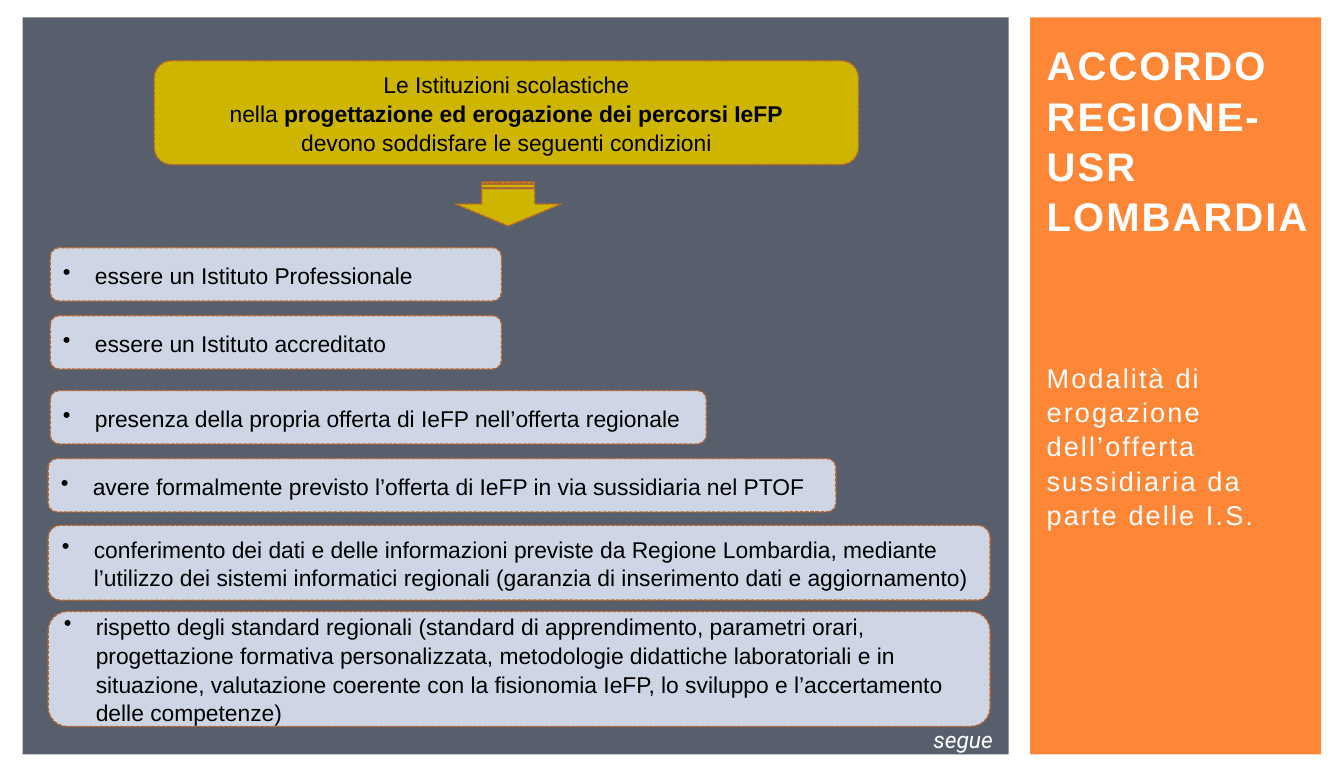
from dataclasses import dataclass

from lxml import etree
from pptx import Presentation
from pptx import util as u
from pptx.dml.color import RGBColor
from pptx.enum import dml, shapes, text
from pptx.oxml import ns


@dataclass(frozen=True)
class Theme:
    """Colours, fonts and type sizes of the slide."""
    panel: str = "575F6D"
    sidebar: str = "FE8637"
    accent: str = "CEB500"
    card: str = "CED6E6"
    outline: str = "BC6329"
    light: str = "FFFFFF"
    dark: str = "000000"
    font: str = "Arial"
    note_font: str = "Roboto"
    title_size: int = 28
    subtitle_size: int = 19
    body_size: int = 16
    line_spacing: float = 1.05


@dataclass(frozen=True)
class Box:
    """A rectangle in centimetres."""
    left: float
    top: float
    width: float
    height: float

    def inside(self, left, top, width, height):
        """Return a box offset from this one."""
        return Box(self.left + left, self.top + top, width, height)

    def lengths(self):
        """Return the four lengths for python-pptx."""
        return [u.Cm(value) for value in (self.left, self.top, self.width, self.height)]


THEME = Theme()
PANEL = Box(0.56, 0.43, 24.36, 18.21)
SIDEBAR = Box(25.45, 0.43, 7.19, 18.21)

HEADING = [
    [("Le Istituzioni scolastiche", False)],
    [("nella ", False), ("progettazione ed erogazione dei percorsi IeFP", True)],
    [("devono soddisfare le seguenti condizioni", False)],
]
CONDITIONS = [
    (0.68, 5.69, 11.15, 1.32, "essere un Istituto Professionale"),
    (0.68, 7.37, 11.15, 1.32, "essere un Istituto accreditato"),
    (0.68, 9.22, 16.21, 1.32,
     "presenza della propria offerta di IeFP nell’offerta regionale"),
    (0.63, 10.9, 19.46, 1.32,
     "avere formalmente previsto l’offerta di IeFP in via sussidiaria nel PTOF"),
    (0.63, 12.55, 23.27, 1.85,
     "conferimento dei dati e delle informazioni previste da Regione Lombardia, "
     "mediante l’utilizzo dei sistemi informatici regionali (garanzia di "
     "inserimento dati e aggiornamento)"),
    (0.63, 14.68, 23.27, 2.84,
     "rispetto degli standard regionali (standard di apprendimento, parametri orari, "
     "progettazione formativa personalizzata, metodologie didattiche laboratoriali e in "
     "situazione, valutazione coerente con la fisionomia IeFP, lo sviluppo e "
     "l’accertamento delle competenze)"),
]


def format_paragraph(paragraph, size, color, align=text.PP_ALIGN.LEFT, font=THEME.font):
    """Apply the type and spacing shared by all runs of a paragraph."""
    paragraph.alignment = align
    paragraph.line_spacing = THEME.line_spacing
    paragraph.space_before = u.Pt(0)
    paragraph.font.name = font
    paragraph.font.size = u.Pt(size)
    paragraph.font.color.rgb = RGBColor.from_string(color)


def add_bullet(paragraph):
    """Give a paragraph a hanging bullet."""
    properties = paragraph._p.get_or_add_pPr()
    properties.set("marL", str(u.Cm(0.79)))
    properties.set("indent", str(u.Cm(-0.79)))
    bullet = etree.Element(ns.qn("a:buChar"), char="•")
    properties.insert_element_before(bullet, "a:tabLst", "a:defRPr", "a:extLst")


def add_filled_shape(slide, kind, box, fill, outlined=True):
    """Add a flat shape, outlined with a fine dashed line if asked."""
    shape = slide.shapes.add_shape(kind, *box.lengths())
    shape.shadow.inherit = False
    shape.fill.solid()
    shape.fill.fore_color.rgb = RGBColor.from_string(fill)
    if outlined:
        shape.line.color.rgb = RGBColor.from_string(THEME.outline)
        shape.line.width = u.Pt(0.9)
        shape.line.dash_style = dml.MSO_LINE.SQUARE_DOT
    else:
        shape.line.fill.background()
    shape.text_frame.word_wrap = True
    shape.text_frame.vertical_anchor = text.MSO_ANCHOR.MIDDLE
    return shape


def add_background(slide, box, fill):
    """Add a plain panel behind everything else."""
    panel = add_filled_shape(slide, shapes.MSO_SHAPE.RECTANGLE, box, fill, outlined=False)
    slide.shapes._spTree.insert(2, panel._element)


def fill_placeholder(placeholder, box, wording, size, bold):
    """Place a sidebar placeholder and set its letter-spaced text."""
    placeholder.left, placeholder.top, placeholder.width, placeholder.height = box.lengths()
    frame = placeholder.text_frame
    frame.text = wording
    frame.word_wrap = True
    frame.auto_size = text.MSO_AUTO_SIZE.NONE
    frame.vertical_anchor = text.MSO_ANCHOR.MIDDLE
    paragraph = frame.paragraphs[0]
    format_paragraph(paragraph, size, THEME.light)
    paragraph.font.bold = bold
    paragraph.runs[0]._r.get_or_add_rPr().set("spc", "150")


def build_sidebar(slide, box):
    """Build the title column."""
    add_background(slide, box, THEME.sidebar)
    fill_placeholder(slide.shapes.title, box.inside(0.15, 0.59, 7.59, 4.83),
                     "ACCORDO REGIONE-USR LOMBARDIA", THEME.title_size, True)
    fill_placeholder(slide.placeholders[1], box.inside(0.15, 8.41, 7.19, 4.32),
                     "Modalità di erogazione dell’offerta sussidiaria da parte delle I.S.",
                     THEME.subtitle_size, False)


def build_heading(slide, box):
    """Build the heading card and the arrow below it."""
    card = add_filled_shape(slide, shapes.MSO_SHAPE.ROUNDED_RECTANGLE, box, THEME.accent)
    frame = card.text_frame
    for index, line in enumerate(HEADING):
        paragraph = frame.add_paragraph() if index else frame.paragraphs[0]
        format_paragraph(paragraph, THEME.body_size, THEME.dark, text.PP_ALIGN.CENTER)
        for wording, bold in line:
            run = paragraph.add_run()
            run.text = wording
            run.font.bold = bold
    arrow = add_filled_shape(slide, shapes.MSO_SHAPE.STRIPED_RIGHT_ARROW,
                             box.inside(8.2, 2.23, 1.09, 2.62), THEME.accent)
    arrow.rotation = 90


def build_conditions(slide, box):
    """Build the panel with its heading, condition cards and closing note."""
    add_background(slide, box, THEME.panel)
    build_heading(slide, box.inside(3.25, 1.07, 17.4, 2.57))
    for *place, wording in CONDITIONS:
        card = add_filled_shape(slide, shapes.MSO_SHAPE.ROUNDED_RECTANGLE,
                                box.inside(*place), THEME.card)
        paragraph = card.text_frame.paragraphs[0]
        paragraph.text = wording
        format_paragraph(paragraph, THEME.body_size, THEME.dark)
        add_bullet(paragraph)
    note = slide.shapes.add_textbox(*box.inside(22.25, 17.35, 4.8, 0.94).lengths())
    note.text_frame.word_wrap = True
    paragraph = note.text_frame.paragraphs[0]
    paragraph.text = "segue"
    format_paragraph(paragraph, THEME.body_size, THEME.light, font=THEME.note_font)
    paragraph.font.italic = True


def main():
    """Build and save the presentation."""
    presentation = Presentation()
    presentation.slide_width = u.Cm(33.2)
    presentation.slide_height = u.Cm(19.05)
    slide = presentation.slides.add_slide(presentation.slide_layouts[0])
    build_sidebar(slide, SIDEBAR)
    build_conditions(slide, PANEL)
    presentation.save("out.pptx")


if __name__ == "__main__":
    main()
